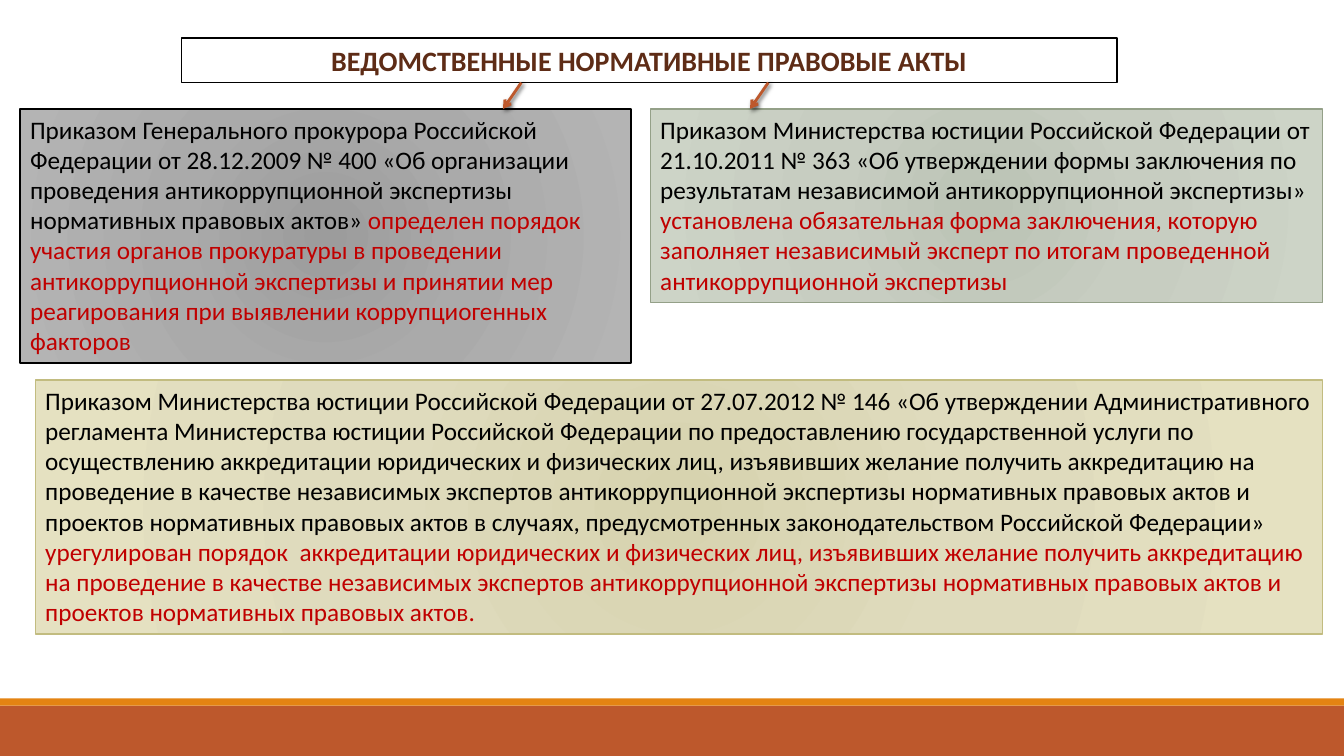
from lxml import etree
from pptx import Presentation
from pptx import util as u
from pptx.dml.color import RGBColor
from pptx.enum import shapes, text
from pptx.oxml import ns

COLORS = {
    "white": "FFFFFF", "black": "000000", "brown": "5E2C16", "red": "C00000",
    "rust": "BD582C", "orange": "E48312", "sage": "94A088", "sand": "C2BC80",
}
FONT = "Calibri"
TITLE = "ВЕДОМСТВЕННЫЕ НОРМАТИВНЫЕ ПРАВОВЫЕ АКТЫ"
TITLE_AREA = (1.8, 0.38, 9.28, 0.44)
BANDS = [((0, 7, 13.33, 0.5), "rust"), ((0, 6.93, 13.33, 0.07), "orange")]
ACTS = [
    {
        "area": (0.2, 1.08, 6.06, 2.52),
        "stops": ("9C9C9C", "AAAAAA", "B4B4B4"),
        "border": "black",
        "act": "Приказом Генерального прокурора Российской Федерации от 28.12.2009 № 400 "
               "«Об организации проведения антикоррупционной экспертизы нормативных правовых актов» ",
        "effect": "определен порядок участия органов прокуратуры в проведении антикоррупционной "
                  "экспертизы и принятии мер реагирования при выявлении коррупциогенных факторов",
    },
    {
        "area": (6.45, 1.08, 6.67, 1.92),
        "stops": ("BBC3B5", "C7CDC1", "CDD4C7"),
        "border": "sage",
        "act": "Приказом Министерства юстиции Российской Федерации от 21.10.2011 № 363 "
               "«Об утверждении формы заключения по результатам независимой антикоррупционной экспертизы» ",
        "effect": "установлена обязательная форма заключения, которую заполняет независимый эксперт "
                  "по итогам проведенной антикоррупционной экспертизы",
    },
    {
        "area": (0.35, 3.77, 12.77, 2.52),
        "stops": ("D7D3AF", "DFDBBD", "E5E1C1"),
        "border": "sand",
        "act": "Приказом Министерства юстиции Российской Федерации от 27.07.2012 № 146 "
               "«Об утверждении Административного регламента Министерства юстиции Российской Федерации "
               "по предоставлению государственной услуги по осуществлению аккредитации юридических "
               "и физических лиц, изъявивших желание получить аккредитацию на проведение в качестве "
               "независимых экспертов антикоррупционной экспертизы нормативных правовых актов "
               "и проектов нормативных правовых актов в случаях, предусмотренных законодательством "
               "Российской Федерации» ",
        "effect": "урегулирован порядок  аккредитации юридических и физических лиц, изъявивших желание "
                  "получить аккредитацию на проведение в качестве независимых экспертов "
                  "антикоррупционной экспертизы нормативных правовых актов и проектов нормативных "
                  "правовых актов.",
    },
]
ARROW_STARTS = (5.17, 7.62)
ARROW_SHIFT = 0.18
STOP_POSITIONS = (0, 45, 100)


def color(name):
    return RGBColor.from_string(COLORS[name])


def set_all(target, values):
    for name, value in values.items():
        setattr(target, name, value)


def add_box(page, area, fill, border=None, width=1):
    box = page.shapes.add_shape(shapes.MSO_SHAPE.RECTANGLE, *map(u.Inches, area))
    box.shadow.inherit = False
    box.fill.solid()
    box.fill.fore_color.rgb = color(fill)
    if border:
        box.line.color.rgb = color(border)
        box.line.width = u.Pt(width)
    else:
        box.line.fill.background()
    return box


def shade(box, stops):
    gradient = etree.Element(ns.qn("a:gradFill"), rotWithShape="1")
    stop_list = etree.SubElement(gradient, ns.qn("a:gsLst"))
    for position, value in zip(STOP_POSITIONS, stops):
        stop = etree.SubElement(stop_list, ns.qn("a:gs"), pos=str(position * 1000))
        etree.SubElement(stop, ns.qn("a:srgbClr"), val=value)
    circle = etree.SubElement(gradient, ns.qn("a:path"), path="circle")
    etree.SubElement(circle, ns.qn("a:fillToRect"), dict.fromkeys("ltrb", "100000"))
    properties = box.element.spPr
    properties.replace(properties.find(ns.qn("a:solidFill")), gradient)


def write(box, spans, size, align, bold=False):
    set_all(box.text_frame, {
        "word_wrap": True,
        "auto_size": text.MSO_AUTO_SIZE.SHAPE_TO_FIT_TEXT,
        "vertical_anchor": text.MSO_ANCHOR.TOP,
    })
    para = box.text_frame.paragraphs[0]
    para.alignment = align
    for words, ink in spans:
        span = para.add_run()
        span.text = words
        set_all(span.font, {"name": FONT, "size": u.Pt(size), "bold": bold})
        span.font.color.rgb = color(ink)


def add_arrow(page, start, top, bottom):
    ends = map(u.Inches, (start, top, start - ARROW_SHIFT, bottom))
    arrow = page.shapes.add_connector(shapes.MSO_CONNECTOR.STRAIGHT, *ends)
    arrow.line.color.rgb = color("rust")
    arrow.line.width = u.Pt(2)
    properties = arrow.element.spPr
    etree.SubElement(properties.find(ns.qn("a:ln")), ns.qn("a:tailEnd"), type="arrow")
    effects = etree.SubElement(properties, ns.qn("a:effectLst"))
    shadow = etree.SubElement(
        effects, ns.qn("a:outerShdw"), blurRad=str(u.Pt(3)), dist=str(u.Pt(2)),
        dir=str(45 * 60000), algn="ctr", rotWithShape="0")
    tint = etree.SubElement(shadow, ns.qn("a:srgbClr"), val=COLORS["black"])
    etree.SubElement(tint, ns.qn("a:alpha"), val="60000")


def main():
    deck = Presentation()
    set_all(deck, {"slide_width": u.Inches(13.33), "slide_height": u.Inches(7.5)})
    page = deck.slides.add_slide(deck.slide_layouts[6])
    for area, fill in BANDS:
        add_box(page, area, fill)
    heading = add_box(page, TITLE_AREA, "white", "black", 1.25)
    write(heading, [(TITLE, "brown")], 20, text.PP_ALIGN.CENTER, True)
    for act in ACTS:
        box = add_box(page, act["area"], "white", act["border"])
        shade(box, act["stops"])
        write(box, [(act["act"], "black"), (act["effect"], "red")], 18, text.PP_ALIGN.LEFT)
    title_bottom = TITLE_AREA[1] + TITLE_AREA[3]
    for start in ARROW_STARTS:
        add_arrow(page, start, title_bottom, ACTS[0]["area"][1])
    deck.save("out.pptx")


if __name__ == "__main__":
    main()
